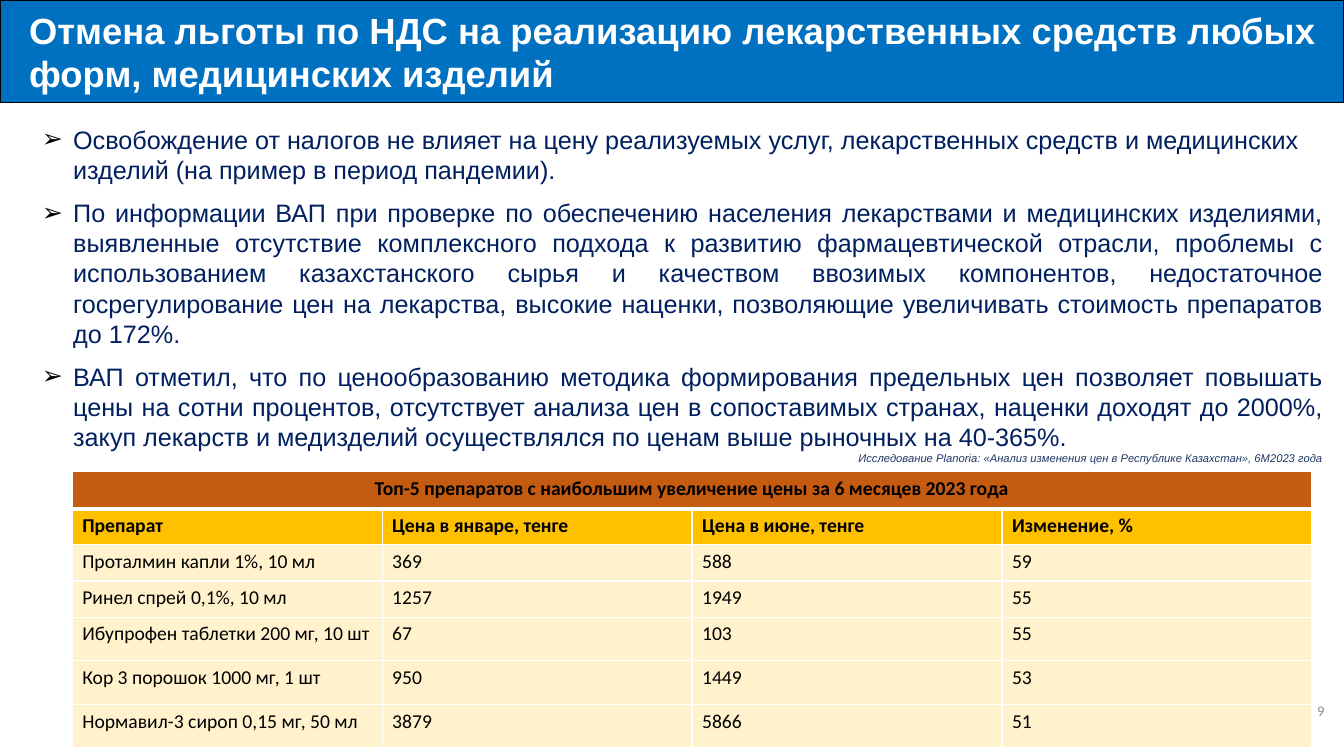
from dataclasses import dataclass

from lxml.etree import SubElement
from pptx import Presentation
from pptx.dml.color import RGBColor
from pptx.enum.text import MSO_ANCHOR, MSO_AUTO_SIZE, PP_ALIGN
from pptx.oxml.ns import qn
from pptx.util import Cm, Pt


@dataclass(frozen=True)
class Theme:
    heading_font: str = "Arial"
    table_font: str = "Calibri"
    blue: str = "0070C0"
    navy: str = "002060"
    source_blue: str = "203864"
    black: str = "000000"
    white: str = "FFFFFF"
    gray: str = "8C8C8C"
    orange: str = "C55A11"
    gold: str = "FFC000"
    cream: str = "FFF2CC"
    title_size: float = 26
    body_size: float = 18
    table_size: float = 14
    number_size: float = 10.5
    source_size: float = 8


theme = Theme()


def write(para, text, size, color, font=theme.heading_font, bold=False,
          italic=False, align=PP_ALIGN.LEFT, before=0, indent=0, hanging=0, bullet=None):
    properties = para._p.get_or_add_pPr()
    properties.set("marL", str(Cm(indent)))
    properties.set("indent", str(Cm(hanging)))
    para.alignment = align
    para.space_before = Pt(before)
    if bullet:
        bullet_color = SubElement(properties, qn("a:buClr"))
        SubElement(bullet_color, qn("a:srgbClr"), val=theme.black)
        SubElement(properties, qn("a:buFont"), typeface=font)
        SubElement(properties, qn("a:buChar"), char=bullet)
    else:
        SubElement(properties, qn("a:buNone"))
    span = para.add_run()
    span.text = text
    span.font.name = font
    span.font.size = Pt(size)
    span.font.bold = bold
    span.font.italic = italic
    span.font.color.rgb = RGBColor.from_string(color)


def set_cell(cell, fill, bottom_width=1):
    properties = cell._tc.get_or_add_tcPr()
    for side, width in (("L", 1), ("R", 1), ("T", 1), ("B", bottom_width)):
        border = SubElement(properties, qn(f"a:ln{side}"), w=str(Pt(width)))
        border_fill = SubElement(border, qn("a:solidFill"))
        SubElement(border_fill, qn("a:srgbClr"), val=theme.white)
    cell.fill.solid()
    cell.fill.fore_color.rgb = RGBColor.from_string(fill)


deck = Presentation()
deck.slide_width, deck.slide_height = Cm(33.87), Cm(19.05)
page = deck.slides.add_slide(deck.slide_layouts[1])

# Title band
title = page.shapes.title
title.left, title.top, title.width, title.height = Cm(0), Cm(0), Cm(33.87), Cm(2.59)
title.fill.solid()
title.fill.fore_color.rgb = RGBColor.from_string(theme.blue)
title.line.color.rgb = RGBColor.from_string(theme.black)
title.line.width = Pt(1)
title.text_frame.auto_size = MSO_AUTO_SIZE.NONE
title.text_frame.vertical_anchor = MSO_ANCHOR.MIDDLE
write(title.text_frame.paragraphs[0],
      "Отмена льготы по НДС на реализацию лекарственных средств любых форм, медицинских изделий",
      theme.title_size, theme.white, bold=True, indent=0.48)

# Slide number
number_box = page.shapes.add_textbox(Cm(30.45), Cm(16.99), Cm(3.18), Cm(1.85))
number_box.text_frame.word_wrap = True
number_box.text_frame.vertical_anchor = MSO_ANCHOR.MIDDLE
write(number_box.text_frame.paragraphs[0], "9", theme.number_size, theme.gray,
      font=theme.table_font, align=PP_ALIGN.RIGHT)

# Findings and their source
findings = [
    ("Освобождение от налогов не влияет на цену реализуемых услуг, лекарственных средств "
     "и медицинских изделий (на пример в период пандемии).", PP_ALIGN.LEFT),
    ("По информации ВАП при проверке по обеспечению населения лекарствами и медицинских "
     "изделиями, выявленные отсутствие комплексного подхода к развитию фармацевтической "
     "отрасли, проблемы с использованием казахстанского сырья и качеством ввозимых "
     "компонентов, недостаточное госрегулирование цен на лекарства, высокие наценки, "
     "позволяющие увеличивать стоимость препаратов до 172%.", PP_ALIGN.JUSTIFY),
    ("ВАП отметил, что по ценообразованию методика формирования предельных цен позволяет "
     "повышать цены на сотни процентов, отсутствует анализа цен в сопоставимых странах, "
     "наценки доходят до 2000%, закуп лекарств и медизделий осуществлялся по ценам выше "
     "рыночных на 40-365%.", PP_ALIGN.JUSTIFY),
]
body = page.placeholders[1]
body.left, body.top, body.width, body.height = Cm(0.8), Cm(3), Cm(32.8), Cm(8.9)
frame = body.text_frame
frame.auto_size = MSO_AUTO_SIZE.NONE
for index, (text, align) in enumerate(findings):
    para = frame.add_paragraph() if index else frame.paragraphs[0]
    write(para, text, theme.body_size, theme.navy, align=align,
          before=9 if index else 0, indent=0.79, hanging=-0.79, bullet="➢")
write(frame.add_paragraph(),
      "Исследование Planoria: «Анализ изменения цен в Республике Казахстан», 6М2023 года",
      theme.source_size, theme.source_blue, italic=True, align=PP_ALIGN.RIGHT)

# Price table
prices = [
    ("Препарат", "Цена в январе, тенге", "Цена в июне, тенге", "Изменение, %"),
    ("Проталмин капли 1%, 10 мл", "369", "588", "59"),
    ("Ринел спрей 0,1%, 10 мл", "1257", "1949", "55"),
    ("Ибупрофен таблетки 200 мг, 10 шт", "67", "103", "55"),
    ("Кор 3 порошок 1000 мг, 1 шт", "950", "1449", "53"),
    ("Нормавил-3 сироп 0,15 мг, 50 мл", "3879", "5866", "51"),
]
row_heights = [0.94, 0.91, 0.91, 0.91, 1.1, 1.1, 1.1]
table = page.shapes.add_table(len(row_heights), 4, Cm(1.82), Cm(11.88),
                              Cm(31.24), Cm(sum(row_heights))).table
table.first_row = table.horz_banding = False
for row, height in zip(table.rows, row_heights):
    row.height = Cm(height)

for cell in table.rows[0].cells:
    set_cell(cell, theme.orange, bottom_width=3)
heading = table.cell(0, 0)
heading.merge(table.cell(0, 3))
write(heading.text_frame.paragraphs[0],
      "Топ-5 препаратов с наибольшим увеличение цены за 6 месяцев 2023 года",
      theme.table_size, theme.black, font=theme.table_font, bold=True, align=PP_ALIGN.CENTER)

for row_index, values in enumerate(prices, start=1):
    is_header = row_index == 1
    for column_index, value in enumerate(values):
        cell = table.cell(row_index, column_index)
        set_cell(cell, theme.gold if is_header else theme.cream)
        write(cell.text_frame.paragraphs[0], value, theme.table_size, theme.black,
              font=theme.table_font, bold=is_header)

deck.save("out.pptx")
